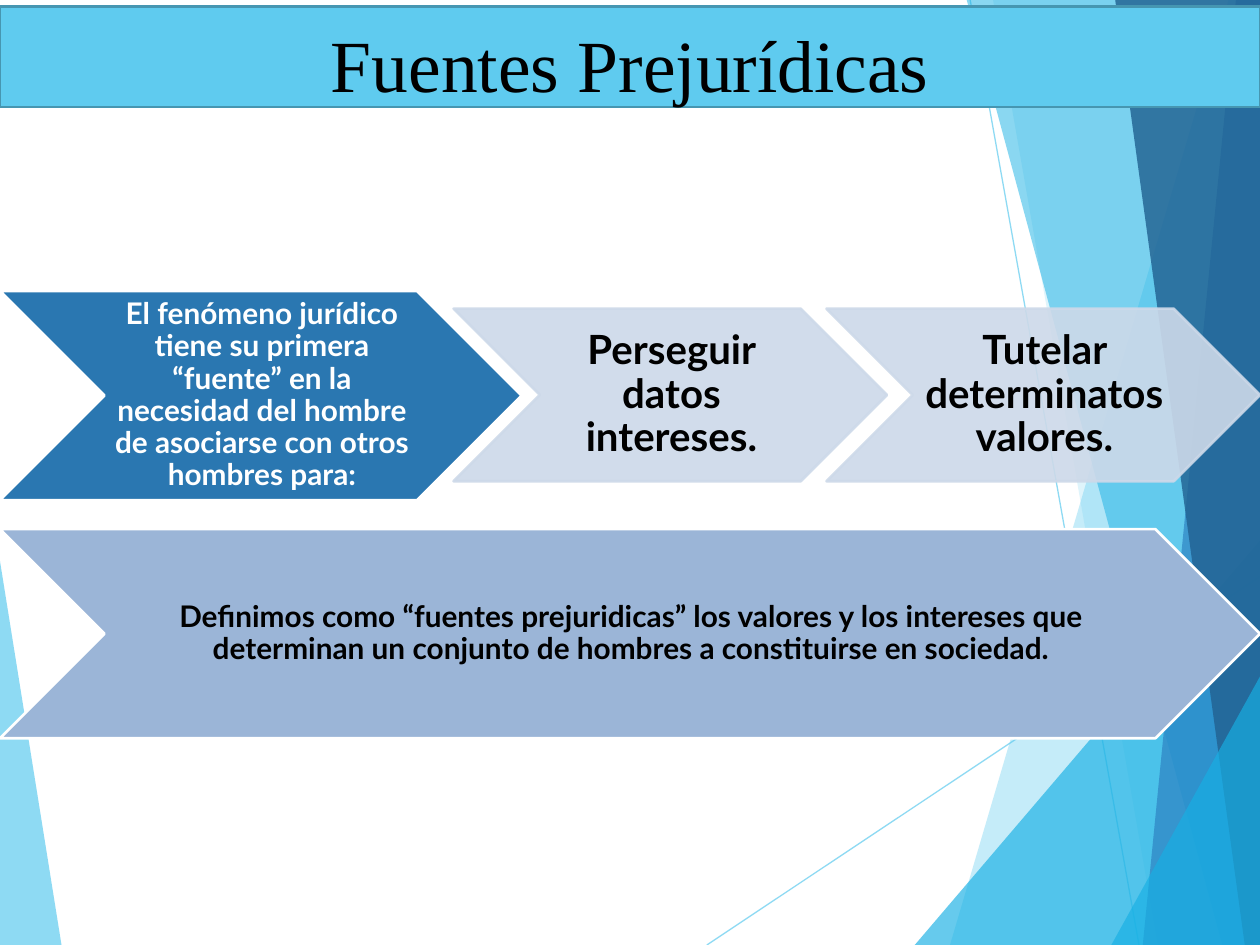
import pptx
import pptx.util
import pptx.dml.color
import pptx.enum.shapes
import pptx.enum.text
import pptx.oxml
import pptx.oxml.ns
from dataclasses import dataclass

PX = 9144  # EMU in one px, at 100 px to the inch
WIDE, HIGH = 1000, 750


@dataclass(frozen=True)
class Theme:
    sky: str = "5FCBEF"
    aqua: str = "17B0E4"
    blue: str = "2E83C3"
    navy: str = "226292"
    edge: str = "4696B1"
    deep: str = "2A77B1"
    pale: str = "CDD9E9"
    mid: str = "9BB5D7"
    white: str = "FFFFFF"
    black: str = "000000"
    serif: str = "Times New Roman"
    sans: str = "Lato"
    head: int = 42
    large: int = 23
    small: int = 17
    rule: float = 1.5
    thin: float = 0.75


LOOK = Theme()


def rgb(code):
    return pptx.dml.color.RGBColor.from_string(code)


def apply(target, values):
    for name, value in values.items():
        setattr(target, name, value)


def fade(shape, alpha):
    """Set the opacity, in percent, of every colour of a shape."""
    tag = pptx.oxml.ns.qn("a:srgbClr")
    for color in shape.element.spPr.iter(tag):
        node = pptx.oxml.parse_xml(
            f'<a:alpha {pptx.oxml.ns.nsdecls("a")} val="{alpha * 1000}"/>')
        color.append(node)


def paint(shape, fill, line=None):
    shape.shadow.inherit = False
    shape.fill.solid()
    shape.fill.fore_color.rgb = rgb(fill)
    if line:
        shape.line.color.rgb = rgb(line)
        shape.line.width = pptx.util.Pt(LOOK.rule)
    else:
        shape.line.fill.background()


def block(slide, kind, box, fill, line):
    shape = slide.shapes.add_shape(kind, *(n * PX for n in box))
    paint(shape, fill, line)
    return shape


def write(shape, text, font, color, pads, frame, para):
    """Fill a shape with one centred paragraph; pads run left, top, right, bottom."""
    body = shape.text_frame
    sides = ("margin_left", "margin_top", "margin_right", "margin_bottom")
    apply(body, {"word_wrap": True, **frame})
    apply(body, {side: pad * PX for side, pad in zip(sides, pads)})
    line = body.paragraphs[0]
    apply(line, {"alignment": pptx.enum.text.PP_ALIGN.CENTER, **para})
    run = line.add_run()
    run.text = text
    apply(run.font, font)
    run.font.color.rgb = rgb(color)


def pane(slide, points, color, alpha):
    first, *rest = points
    path = slide.shapes.build_freeform(*first, scale=PX)
    path.add_line_segments(rest, close=True)
    shape = path.convert_to_shape()
    paint(shape, color)
    fade(shape, alpha)


def ray(slide, start, end):
    line = slide.shapes.add_connector(
        pptx.enum.shapes.MSO_CONNECTOR.STRAIGHT,
        *(n * PX for n in start + end))
    line.line.color.rgb = rgb(LOOK.sky)
    line.line.width = pptx.util.Pt(LOOK.thin)
    fade(line, 70)
    line.element.spPr.append(pptx.oxml.parse_xml(
        f'<a:effectLst {pptx.oxml.ns.nsdecls("a")}/>'))


def backdrop(slide, box):
    """Draw the left wedge, two thin rays and the panes along the right edge."""
    left, top, width, height = box
    right, foot = left + width, top + height
    pane(slide, [(left - 1, top + 439), (left + 49, foot + 1), (left - 1, foot)],
         LOOK.sky, 70)
    ray(slide, (left + 561, foot), (right + 1, top + 457))
    ray(slide, (left + 770, top), (left + 904, foot))
    panes = [  # upper x, upper y, lower x, colour, opacity
        (975, 0, 754, LOOK.sky, 36),
        (788, -1, 919, LOOK.sky, 20),
        (1000, 429, 726, LOOK.aqua, 66),
        (767, -1, 970, LOOK.aqua, 50),
        (981, -1, 907, LOOK.blue, 70),
        (885, -1, 988, LOOK.navy, 82),
        (1001, 535, 882, LOOK.aqua, 66),
    ]
    for x, y, base, color, alpha in panes:
        pane(slide, [(left + x, top + y), (left + base, foot),
                     (right + 1, foot), (right + 1, top + y)], color, alpha)


def banner(slide, box, text):
    shape = block(slide, pptx.enum.shapes.MSO_SHAPE.RECTANGLE, box,
                  LOOK.sky, LOOK.edge)
    write(shape, text,
          {"name": LOOK.serif, "size": pptx.util.Pt(LOOK.head)}, LOOK.black,
          (10, 10, 10, 0),
          {"vertical_anchor": pptx.enum.text.MSO_ANCHOR.TOP}, {})


def arrow(slide, box, text, size, fill, line, color, alpha=100):
    shape = block(slide, pptx.enum.shapes.MSO_SHAPE.CHEVRON, box, fill, line)
    if alpha < 100:
        fade(shape, alpha)
    write(shape, text,
          {"name": LOOK.sans, "size": pptx.util.Pt(size), "bold": True}, color,
          (2, 1, 0, 1),
          {"vertical_anchor": pptx.enum.text.MSO_ANCHOR.MIDDLE},
          {"line_spacing": 0.9})


def process(slide, box):
    """Place a lead arrow with two steps after it, and a full-width arrow below."""
    left, top, width, height = box
    tall, pitch = 166, 296
    arrow(slide, (left, top, 414, tall),
          "El fenómeno jurídico tiene su primera “fuente” en la necesidad "
          "del hombre de asociarse con otros hombres para:",
          LOOK.small, LOOK.deep, LOOK.white, LOOK.white)
    steps = ["Perseguir datos intereses.", "Tutelar determinatos valores."]
    for i, text in enumerate(steps):
        arrow(slide, (left + 360 + i * pitch, top + 14, 344, 137), text,
              LOOK.large, LOOK.pale, LOOK.pale, LOOK.black, 90)
    arrow(slide, (left, top + height - tall, width, tall),
          "Definimos como “fuentes prejuridicas” los valores y los intereses "
          "que determinan un conjunto de hombres a constituirse en sociedad.",
          LOOK.small, LOOK.mid, LOOK.white, LOOK.black)


def main():
    deck = pptx.Presentation()
    apply(deck, {"slide_width": WIDE * PX, "slide_height": HIGH * PX})
    slide = deck.slides.add_slide(deck.slide_layouts[6])
    backdrop(slide, (0, 0, WIDE, HIGH))
    banner(slide, (0, 5, WIDE, 80), "Fuentes Prejurídicas")
    process(slide, (0, 231, WIDE, 355))
    deck.save("out.pptx")


if __name__ == "__main__":
    main()
